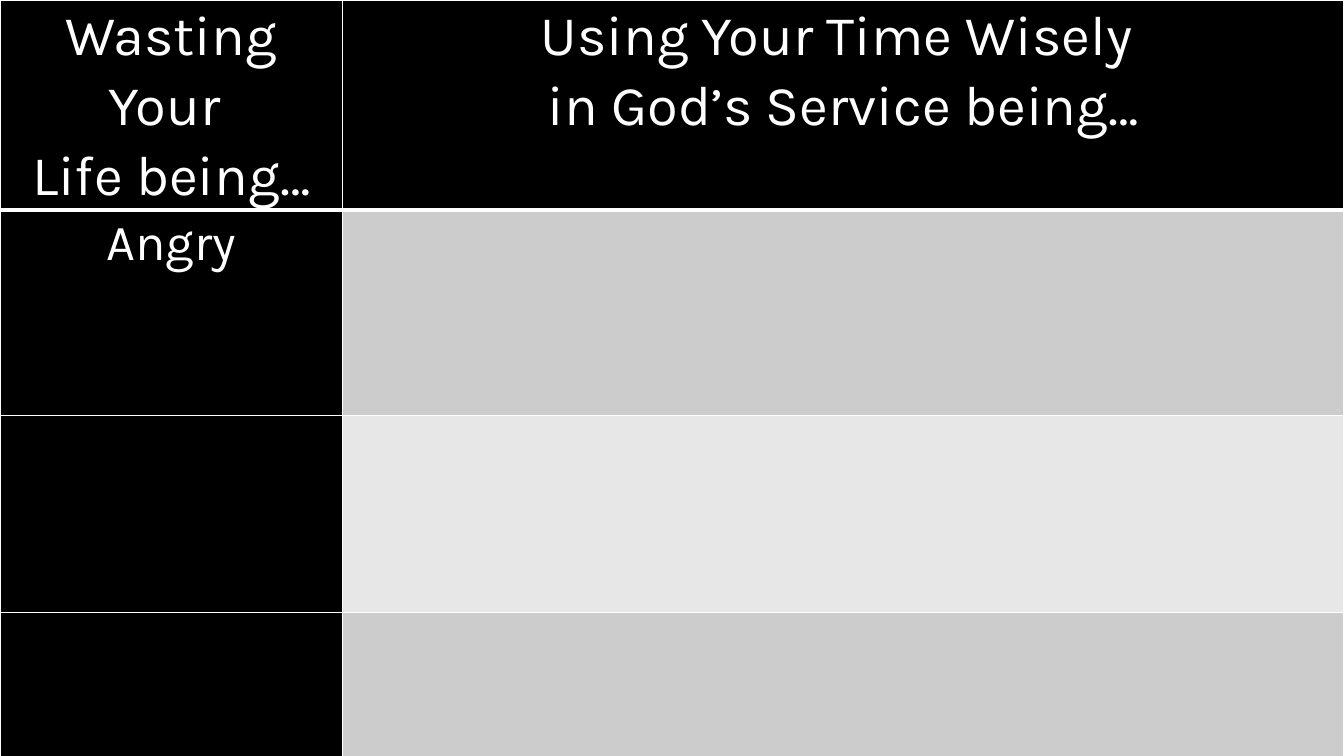
from lxml import etree
from pptx import Presentation
from pptx.dml.color import RGBColor
from pptx.enum.text import PP_ALIGN
from pptx.oxml.ns import qn
from pptx.util import Cm, Pt

CENTER = PP_ALIGN.CENTER
BLANK_LAYOUT = 6

# Content: one tuple of paragraphs per cell
ROWS = [
    [("Wasting Your ", "Life being…"),
     ("Using Your Time Wisely ", "in God’s Service being…")],
    [("Angry",), ()],
    [(), ()],
    [(), ()],
]
COLUMN_WIDTHS = [8.63, 25.24]
ROW_HEIGHTS = [4.02, 5.19, 4.95, 4.89]

THEME = {
    "font": "Karla",
    "dark": "000000",
    "bands": ["CCCCCC", "E7E7E7"],
    "light": "FFFFFF",
    "header_size": 40,
    "body_size": 36,
    "line_spacing": 1.07,
    "thin": 1,
    "thick": 3,
}
CELL_FORMAT = {"margin_left": Cm(0.18), "margin_right": Cm(0.18),
               "margin_top": 0, "margin_bottom": 0}


def set_format(target, values):
    for name, value in values.items():
        setattr(target, name, value)


def fill_solid(fill, color):
    fill.solid()
    fill.fore_color.rgb = RGBColor.from_string(color)


def set_borders(cell, widths):
    properties = cell._tc.get_or_add_tcPr()
    for index, (side, width) in enumerate(widths.items()):
        line = etree.Element(qn(f"a:ln{side}"), w=str(Pt(width)))
        solid = etree.SubElement(line, qn("a:solidFill"))
        etree.SubElement(solid, qn("a:srgbClr"), val=THEME["light"])
        properties.insert(index, line)


def write_paragraphs(cell, lines, size):
    frame = cell.text_frame
    for index, line in enumerate(lines):
        paragraph = frame.add_paragraph() if index else frame.paragraphs[0]
        set_format(paragraph, {"alignment": CENTER,
                               "line_spacing": THEME["line_spacing"]})
        run = paragraph.add_run()
        run.text = line
        set_format(run.font, {"name": THEME["font"], "size": Pt(size), "bold": False})
        run.font.color.rgb = RGBColor.from_string(THEME["light"])


def main():
    presentation = Presentation()
    set_format(presentation, {"slide_width": Cm(sum(COLUMN_WIDTHS)),
                              "slide_height": Cm(sum(ROW_HEIGHTS))})
    slide = presentation.slides.add_slide(presentation.slide_layouts[BLANK_LAYOUT])
    fill_solid(slide.background.fill, THEME["dark"])

    # Table covering the whole slide
    table = slide.shapes.add_table(
        len(ROW_HEIGHTS), len(COLUMN_WIDTHS), 0, 0,
        presentation.slide_width, presentation.slide_height).table
    table.horz_banding = False
    for column, width in zip(table.columns, COLUMN_WIDTHS):
        column.width = Cm(width)
    for row, height in zip(table.rows, ROW_HEIGHTS):
        row.height = Cm(height)

    # Dark header row and first column, alternating bands elsewhere
    thin, thick = THEME["thin"], THEME["thick"]
    for row_index, row in enumerate(ROWS):
        is_header = row_index == 0
        size = THEME["header_size"] if is_header else THEME["body_size"]
        for column_index, lines in enumerate(row):
            cell = table.cell(row_index, column_index)
            is_dark = is_header or column_index == 0
            band = THEME["bands"][(row_index - 1) % 2]
            set_format(cell, CELL_FORMAT)
            fill_solid(cell.fill, THEME["dark"] if is_dark else band)
            set_borders(cell, {"L": thin, "R": thin,
                               "T": thick if row_index == 1 else thin,
                               "B": thick if is_header else thin})
            write_paragraphs(cell, lines, size)

    presentation.save("out.pptx")


if __name__ == "__main__":
    main()
